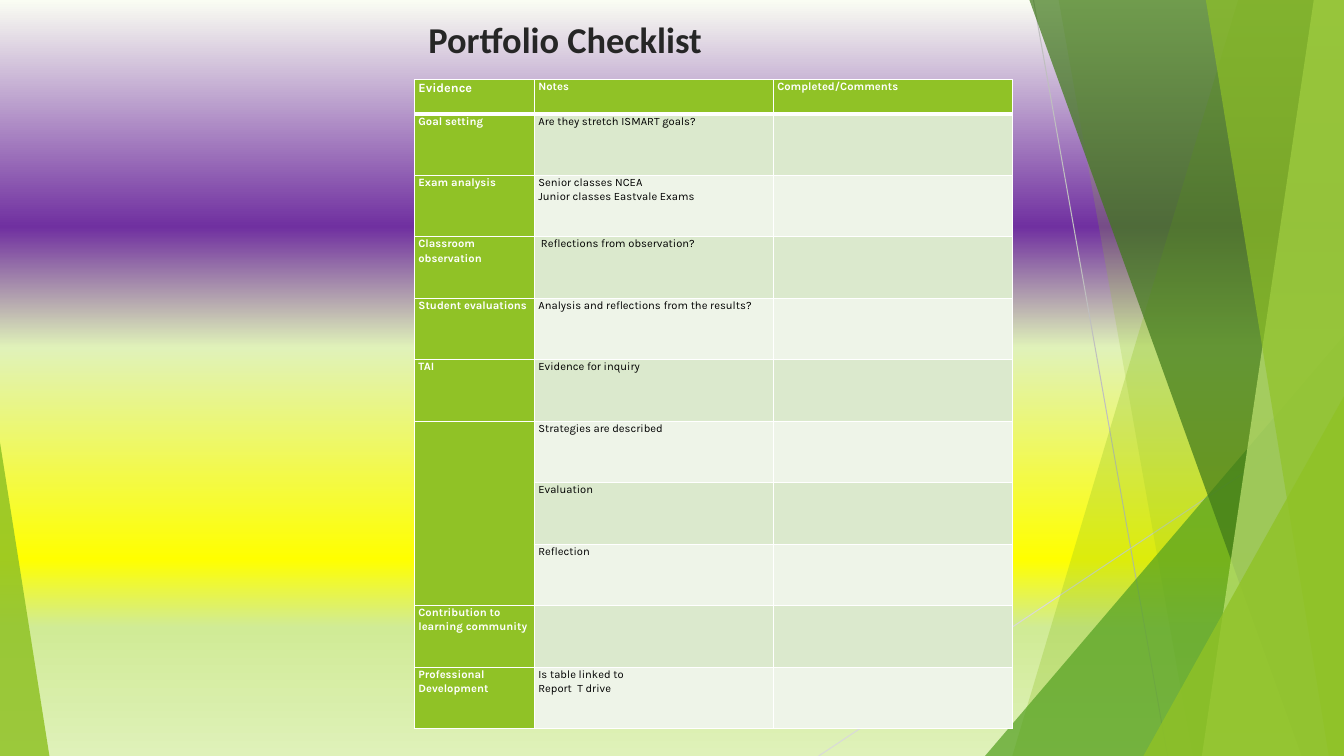
from lxml.etree import SubElement
from pptx import Presentation
from pptx.dml.color import RGBColor
from pptx.enum.shapes import MSO_CONNECTOR, MSO_SHAPE
from pptx.enum.text import MSO_ANCHOR
from pptx.oxml.ns import qn
from pptx.util import Inches, Pt

WHITE = RGBColor(0xFF, 0xFF, 0xFF)
BLACK = RGBColor(0, 0, 0)
TITLE_INK = RGBColor(0x26, 0x26, 0x26)
GREEN = RGBColor(0x90, 0xC2, 0x26)
MID_GREEN = RGBColor(0x54, 0xA0, 0x21)
DARK_GREEN = RGBColor(0x3F, 0x78, 0x19)
PALE_GREEN = RGBColor(0xC0, 0xE4, 0x74)
GREY = RGBColor(0xBF, 0xBF, 0xBF)
LIGHT_GREY = RGBColor(0xD9, 0xD9, 0xD9)
BANDS = [RGBColor(0xDB, 0xE9, 0xCD), RGBColor(0xEE, 0xF4, 0xE8)]

W, H = 13.33, 7.5
TITLE = "Portfolio Checklist"
BACKGROUND = [
    (0, RGBColor(0xFA, 0xFD, 0xF3)),
    (30, RGBColor(0x70, 0x30, 0xA0)),
    (46, RGBColor(0xE0, 0xF2, 0xB9)),
    (74, RGBColor(0xFF, 0xFF, 0x00)),
    (83, RGBColor(0xD0, 0xEB, 0x96)),
    (100, RGBColor(0xDF, 0xF1, 0xB9)),
]
RAYS = [((10.25, 0), (11.58, H), GREY), ((W, 4.03), (8.12, H), LIGHT_GREY)]
# kind, geometry, colour, opacity
FACETS = [
    ("band", (12.28, 10.04), GREEN, 30),
    ("band", (10.5, 11.83), GREEN, 20),
    ("triangle", (9.77, 3.33, 3.56, 1), MID_GREEN, 72),
    ("band", (10.21, 12.91), DARK_GREEN, 70),
    ("band", (13.03, 11.92), PALE_GREEN, 70),
    ("band", (11.96, 13.18), GREEN, 65),
    ("triangle", (11.34, 3.93, 1.99, 1), GREEN, 80),
    ("triangle", (0, 4.39, 0.49, 0), GREEN, 85),
]
ROWS = [
    ("Evidence", "Notes", "Completed/Comments"),
    ("Goal setting", "Are they stretch ISMART goals?", ""),
    ("Exam analysis", "Senior classes NCEA\nJunior classes Eastvale Exams", ""),
    ("Classroom observation", " Reflections from observation?", ""),
    ("Student evaluations", "Analysis and reflections from the results?", ""),
    ("TAI", "Evidence for inquiry", ""),
    ("", "Strategies are described", ""),
    ("", "Evaluation", ""),
    ("", "Reflection", ""),
    ("Contribution to learning community", "", ""),
    ("Professional Development", "Is table linked to\nReport  T drive", ""),
]
COLUMN_WIDTHS = [1.19, 2.37, 2.37]
HEADER_HEIGHT, ROW_HEIGHT = 0.34, 0.61
MERGED_ROWS = (6, 8)


def paint_background(s):
    s.background.fill.gradient()
    grad = s._element.find(".//" + qn("a:gradFill"))
    for child in list(grad):
        grad.remove(child)
    stops = SubElement(grad, qn("a:gsLst"))
    for position, color in BACKGROUND:
        stop = SubElement(stops, qn("a:gs"), pos=str(position * 1000))
        SubElement(stop, qn("a:srgbClr"), val=str(color))
    SubElement(grad, qn("a:lin"), ang="5400000", scaled="0")


def add_ray(s, start, end, color):
    points = [Inches(v) for v in start + end]
    line = s.shapes.add_connector(MSO_CONNECTOR.STRAIGHT, *points)
    line.line.color.rgb = color
    line.line.width = Pt(0.75)
    SubElement(line._element.spPr, qn("a:effectLst"))


def add_facet(s, kind, geometry, color, opacity):
    if kind == "band":
        top_x, bottom_x = geometry
        corners = [(W, 0), (W, H), (bottom_x, H)]
        builder = s.shapes.build_freeform(Inches(top_x), 0, scale=1.0)
        builder.add_line_segments([(Inches(x), Inches(y)) for x, y in corners])
        sp = builder.convert_to_shape()
    else:
        left, top, width, apex = geometry
        sp = s.shapes.add_shape(MSO_SHAPE.ISOSCELES_TRIANGLE, Inches(left),
                                Inches(top), Inches(width), Inches(H - top))
        sp.adjustments[0] = apex
    sp.shadow.inherit = False
    sp.line.fill.background()
    sp.fill.solid()
    sp.fill.fore_color.rgb = color
    clr = sp._element.spPr.find(".//" + qn("a:srgbClr"))
    SubElement(clr, qn("a:alpha"), val=str(opacity * 1000))


def set_borders(cell, bottom):
    tc_pr = cell._tc.get_or_add_tcPr()
    for i, (side, width) in enumerate(zip("LRTB", (1, 1, 1, bottom))):
        ln = SubElement(tc_pr, qn("a:ln" + side), w=str(Pt(width)))
        fill = SubElement(ln, qn("a:solidFill"))
        SubElement(fill, qn("a:srgbClr"), val=str(WHITE))
        tc_pr.insert(i, ln)


def fill_cell(cell, text, row, column):
    heading = row == 0 or column == 0
    cell.margin_left = cell.margin_right = Inches(0.04)
    cell.margin_top = cell.margin_bottom = 0
    cell.fill.solid()
    cell.fill.fore_color.rgb = GREEN if heading else BANDS[(row - 1) % 2]
    set_borders(cell, 3 if row == 0 else 1)
    cell.text_frame.text = text
    for p in cell.text_frame.paragraphs:
        p.line_spacing = 1.07
        p.font.name = "Karla"
        p.font.size = Pt(9 if row == column == 0 else 8)
        p.font.bold = heading
        p.font.color.rgb = WHITE if heading else BLACK


def add_checklist(s):
    heights = [HEADER_HEIGHT] + [ROW_HEIGHT] * (len(ROWS) - 1)
    frame = s.shapes.add_table(len(ROWS), len(COLUMN_WIDTHS), Inches(4.11), Inches(0.79),
                               Inches(sum(COLUMN_WIDTHS)), Inches(sum(heights)))
    table = frame.table
    for column, width in zip(table.columns, COLUMN_WIDTHS):
        column.width = Inches(width)
    for row, height in zip(table.rows, heights):
        row.height = Inches(height)
    for i, texts in enumerate(ROWS):
        for j, text in enumerate(texts):
            fill_cell(table.cell(i, j), text, i, j)
    first, last = MERGED_ROWS
    table.cell(first, 0).merge(table.cell(last, 0))


def add_title(s):
    box = s.shapes.add_textbox(Inches(4.15), Inches(0.14), Inches(W - 4.15), Inches(0.5))
    tf = box.text_frame
    tf.word_wrap = True
    tf.vertical_anchor = MSO_ANCHOR.MIDDLE
    tf.text = TITLE
    font = tf.paragraphs[0].font
    font.name, font.size, font.bold = "Calibri", Pt(26), True
    font.color.rgb = TITLE_INK


def main():
    prs = Presentation()
    prs.slide_width, prs.slide_height = Inches(W), Inches(H)
    s = prs.slides.add_slide(prs.slide_layouts[6])
    paint_background(s)
    for ray in RAYS:
        add_ray(s, *ray)
    for facet in FACETS:
        add_facet(s, *facet)
    add_checklist(s)
    add_title(s)
    prs.save("out.pptx")


if __name__ == "__main__":
    main()
